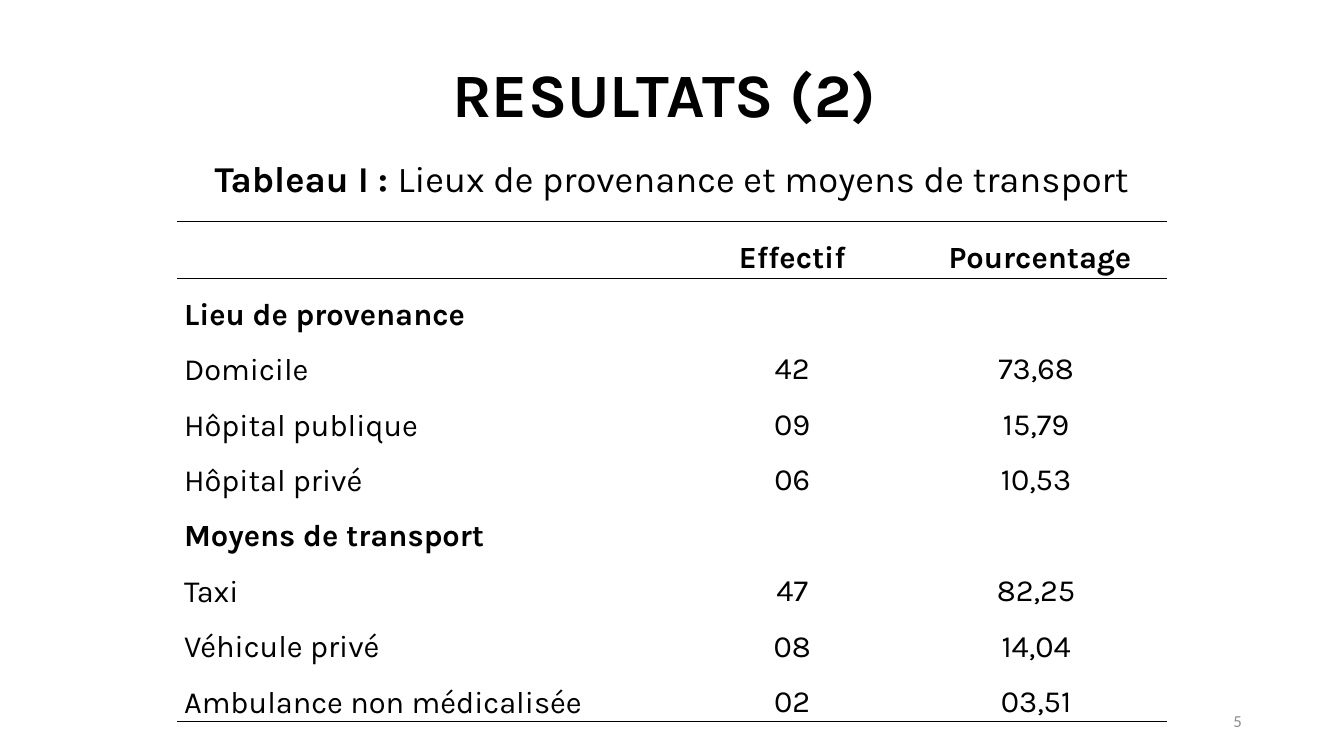
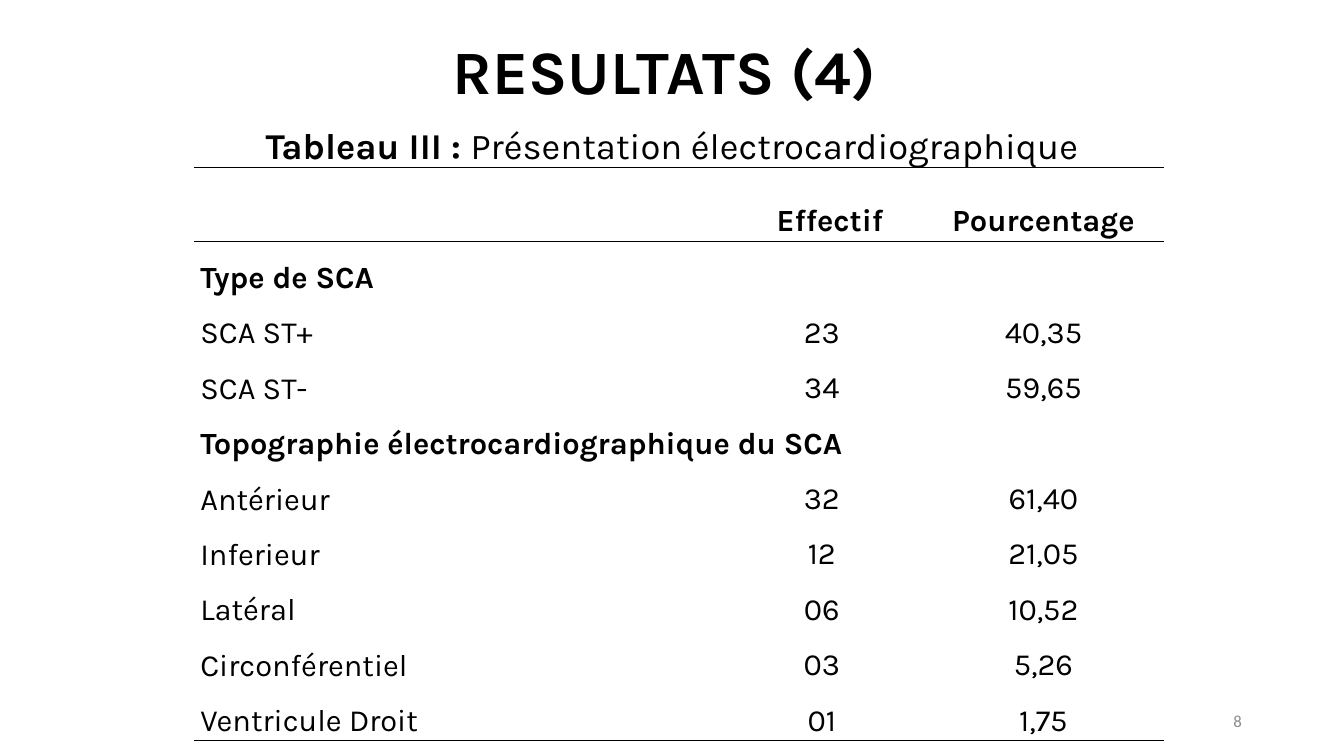
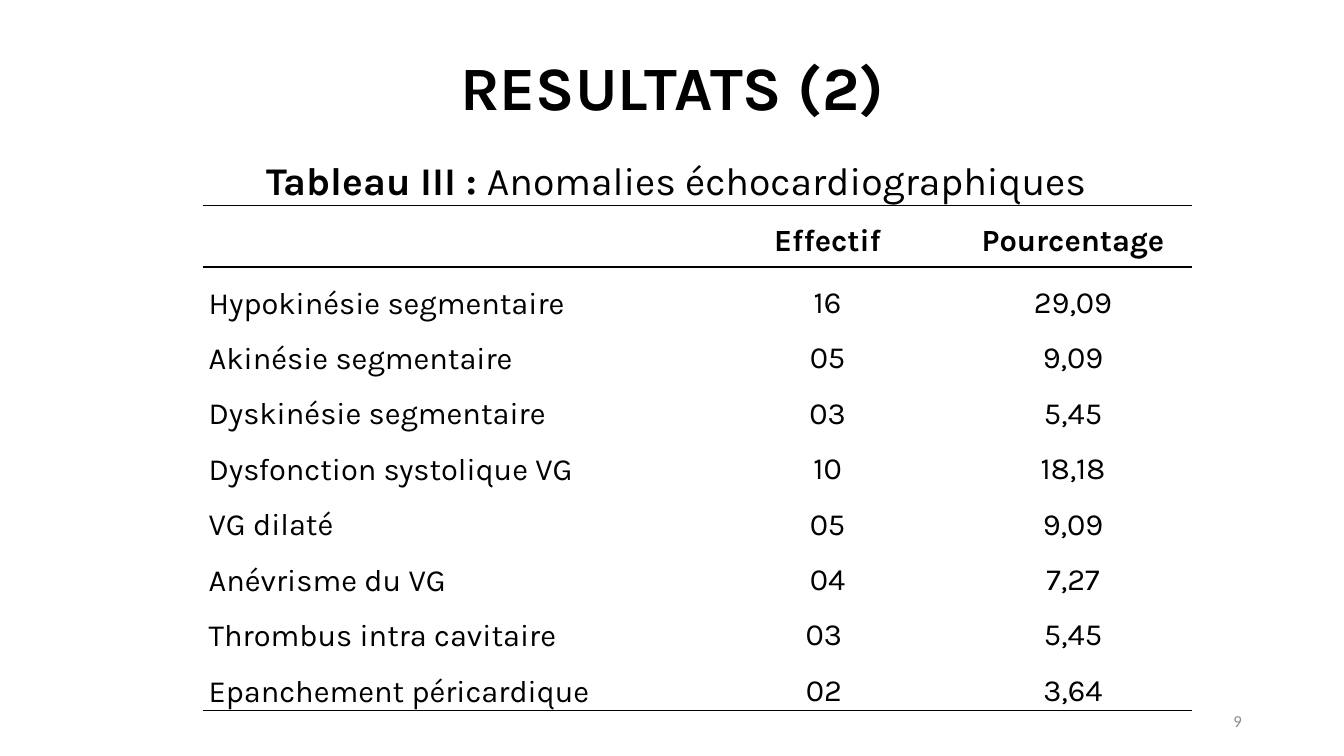
from dataclasses import dataclass

from lxml.etree import SubElement
from pptx import Presentation
from pptx.dml.color import RGBColor
from pptx.enum.text import MSO_ANCHOR, PP_ALIGN
from pptx.oxml.ns import qn
from pptx.util import Cm, Pt

BLACK = RGBColor(0x00, 0x00, 0x00)
GREY = RGBColor(0x8C, 0x8C, 0x8C)
FONT = "Karla"
NUMBER_FONT = "Calibri"
PLAIN_TABLE_STYLE = "{2D5ABB26-0587-4C30-8999-92F81FD0307C}"

MARGIN_LEFT = 2.34
CONTENT_WIDTH = 29.21
ROW_HEIGHT = 1.39

TITLE_FONT = {"name": FONT, "size": Pt(44), "bold": True}
NUMBER_STYLE = {"name": NUMBER_FONT, "size": Pt(12)}
CELL_FONT = {"name": FONT, "size": Pt(22)}

SIMPLE_COLUMNS = ((0, 0), (1, 1), (2, 2))


@dataclass
class ResultTable:
    """Rows of one label are section headings; spans are (first, last) columns."""
    left: float
    top: float
    column_widths: tuple
    header_height: float
    header: tuple
    rows: tuple
    side_inset: float = 0.17
    header_spacing: float = 1.5
    header_spans: tuple = SIMPLE_COLUMNS
    body_spans: tuple = SIMPLE_COLUMNS
    count_header_alignment: PP_ALIGN = PP_ALIGN.CENTER


@dataclass
class ResultSlide:
    number: int
    title: str
    title_top: float
    caption_label: str
    caption: str
    caption_top: float
    table: ResultTable
    caption_size: int = 26
    caption_width: float = CONTENT_WIDTH


RESULT_SLIDES = (
    ResultSlide(
        5, "RESULTATS (2) ", 0.61,
        "Tableau I : ", "Lieux de provenance et moyens de transport", 3.81,
        ResultTable(
            4.47, 5.59, (12.65, 5.69, 6.6), 1.42,
            ("", "Effectif", " Pourcentage"),
            (
                ("Lieu de provenance",),
                ("Domicile", "42", "73,68"),
                ("Hôpital publique", "09", "15,79"),
                ("Hôpital privé", "06", "10,53"),
                ("Moyens de transport",),
                ("Taxi", "47", "82,25"),
                ("Véhicule privé", "08", "14,04"),
                ("Ambulance non médicalisée", "02", "03,51"),
            ),
        ),
    ),
    ResultSlide(
        8, "RESULTATS (4) ", 0.05,
        "Tableau III : ", "Présentation électrocardiographique", 2.97,
        ResultTable(
            4.88, 4.22, (13.28, 1.24, 3.86, 6.07), 1.85,
            ("", "Effectif ", "Pourcentage"),
            (
                ("Type de SCA ",),
                ("SCA ST+", "23", "40,35"),
                ("SCA ST-", "34", "59,65"),
                ("Topographie électrocardiographique du SCA",),
                ("Antérieur", "32", "61,40"),
                ("Inferieur", "12", "21,05"),
                ("Latéral", "06", "10,52"),
                ("Circonférentiel", "03", "5,26"),
                ("Ventricule Droit", "01", "1,75"),
            ),
            header_spacing=2.0,
            header_spans=((0, 1), (2, 2), (3, 3)),
            body_spans=((0, 0), (1, 2), (3, 3)),
            count_header_alignment=PP_ALIGN.LEFT,
        ),
    ),
    ResultSlide(
        9, "RESULTATS (2)", 0.43,
        "Tableau III : ", "Anomalies échocardiographiques", 3.81,
        ResultTable(
            5.11, 5.18, (12.57, 6.35, 6.02), 1.55,
            ("", "Effectif", "Pourcentage"),
            (
                ("Hypokinésie segmentaire", "16", "29,09"),
                ("Akinésie segmentaire", "05", "9,09"),
                ("Dyskinésie segmentaire", "03", "5,45"),
                ("Dysfonction systolique VG", "10", "18,18"),
                ("VG dilaté", "05", "9,09"),
                ("Anévrisme du VG", "04", "7,27"),
                ("Thrombus intra cavitaire", "03 ", "5,45"),
                ("Epanchement péricardique", "02 ", "3,64"),
            ),
            side_inset=0.15,
        ),
        caption_size=28,
        caption_width=29.41,
    ),
)


def set_attributes(target, values):
    for name, value in values.items():
        setattr(target, name, value)


def add_run(paragraph, text, font, color=BLACK):
    run = paragraph.add_run()
    run.text = text
    set_attributes(run.font, font)
    run.font.color.rgb = color


def add_text(slide, box, runs, alignment, anchor=MSO_ANCHOR.MIDDLE,
             line_spacing=1.0, color=BLACK):
    """Add one paragraph made of (text, font) runs; box is in centimetres."""
    shape = slide.shapes.add_textbox(*(Cm(length) for length in box))
    set_attributes(shape.text_frame, {"word_wrap": True, "vertical_anchor": anchor})
    paragraph = shape.text_frame.paragraphs[0]
    set_attributes(paragraph, {"alignment": alignment, "line_spacing": line_spacing})
    for text, font in runs:
        add_run(paragraph, text, font, color)


def add_rules(row, sides):
    """Draw 1 pt black rules along a table row; sides are T and B."""
    for cell in row.cells:
        properties = cell._tc.get_or_add_tcPr()
        for side in sides:
            line = SubElement(properties, qn(f"a:ln{side}"), w=str(Pt(1)))
            fill = SubElement(line, qn("a:solidFill"))
            SubElement(fill, qn("a:srgbClr"), val=str(BLACK))


def fill_cell(cell, text, side_inset, bold, alignment, line_spacing, anchor):
    set_attributes(cell, {
        "margin_left": Cm(side_inset), "margin_right": Cm(side_inset),
        "margin_top": 0, "margin_bottom": 0, "vertical_anchor": anchor,
    })
    if text:
        paragraph = cell.text_frame.paragraphs[0]
        set_attributes(paragraph, {
            "alignment": alignment, "line_spacing": line_spacing,
            "space_after": Pt(8),
        })
        add_run(paragraph, text, CELL_FONT | {"bold": bold})


def fill_row(table, row_index, texts, content):
    """Merge the spans of one row and write its texts."""
    is_header = row_index == 0
    is_section = len(texts) == 1
    if is_header:
        spans = content.header_spans
    elif is_section:
        spans = ((0, len(content.column_widths) - 1),)
    else:
        spans = content.body_spans
    alignments = [PP_ALIGN.LEFT, PP_ALIGN.CENTER, PP_ALIGN.CENTER]
    if is_header:
        alignments[1] = content.count_header_alignment

    for text, (first, last), alignment in zip(texts, spans, alignments):
        cell = table.cell(row_index, first)
        if last > first:
            cell.merge(table.cell(row_index, last))
        fill_cell(
            cell, text, content.side_inset, is_header or is_section, alignment,
            content.header_spacing if is_header else 1.5,
            MSO_ANCHOR.MIDDLE if first == 0 else MSO_ANCHOR.TOP,
        )


def add_result_table(slide, content):
    all_rows = (content.header, *content.rows)
    heights = [content.header_height] + [ROW_HEIGHT] * len(content.rows)
    frame = slide.shapes.add_table(
        len(all_rows), len(content.column_widths), Cm(content.left), Cm(content.top),
        Cm(sum(content.column_widths)), Cm(sum(heights)),
    )
    table = frame.table
    set_attributes(table, {"first_row": False, "horz_banding": False})
    table._tbl.tblPr.find(qn("a:tableStyleId")).text = PLAIN_TABLE_STYLE
    for column, width in zip(table.columns, content.column_widths):
        column.width = Cm(width)
    for index, (texts, height) in enumerate(zip(all_rows, heights)):
        table.rows[index].height = Cm(height)
        fill_row(table, index, texts, content)
    add_rules(table.rows[0], "TB")
    add_rules(table.rows[len(all_rows) - 1], "B")
    for cell in table.iter_cells():
        cell.fill.background()


def add_result_slide(presentation, content):
    slide = presentation.slides.add_slide(presentation.slide_layouts[6])
    add_text(slide, (MARGIN_LEFT, content.title_top, CONTENT_WIDTH, 3.68),
             [(content.title, TITLE_FONT)], PP_ALIGN.CENTER, line_spacing=0.9)
    caption_font = {"name": FONT, "size": Pt(content.caption_size)}
    add_text(slide, (MARGIN_LEFT, content.caption_top, content.caption_width, 1.4),
             [(content.caption_label, caption_font | {"bold": True}),
              (content.caption, caption_font | {"bold": False})],
             PP_ALIGN.CENTER, anchor=MSO_ANCHOR.TOP)
    add_text(slide, (23.93, 17.65, 7.62, 1.02),
             [(str(content.number), NUMBER_STYLE)], PP_ALIGN.RIGHT, color=GREY)
    add_result_table(slide, content.table)


def main():
    presentation = Presentation()
    set_attributes(presentation, {"slide_width": Cm(33.87), "slide_height": Cm(19.05)})
    for content in RESULT_SLIDES:
        add_result_slide(presentation, content)
    presentation.save("out.pptx")


if __name__ == "__main__":
    main()
